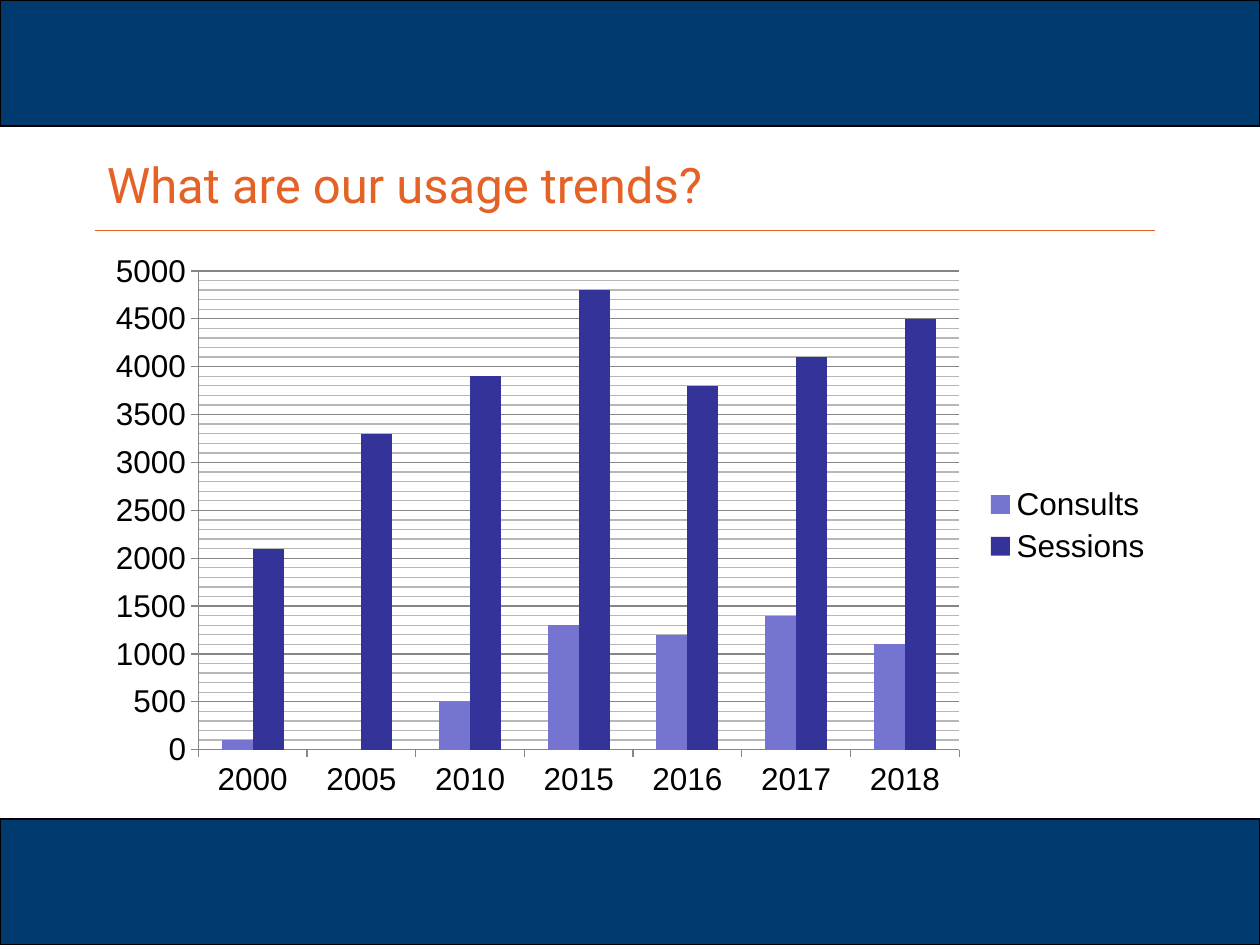
from copy import deepcopy

from lxml import etree
from pptx import Presentation
from pptx.chart.data import CategoryChartData
from pptx.dml.color import RGBColor
from pptx.enum.chart import XL_CHART_TYPE, XL_LEGEND_POSITION, XL_TICK_MARK
from pptx.enum.shapes import MSO_CONNECTOR, MSO_SHAPE
from pptx.enum.text import MSO_ANCHOR
from pptx.oxml.ns import qn
from pptx.util import Inches, Pt

COLUMNS = XL_CHART_TYPE.COLUMN_CLUSTERED
LEGEND_RIGHT = XL_LEGEND_POSITION.RIGHT
TICK_OUT, TICK_NONE = XL_TICK_MARK.OUTSIDE, XL_TICK_MARK.NONE
STRAIGHT, RECTANGLE = MSO_CONNECTOR.STRAIGHT, MSO_SHAPE.RECTANGLE
MIDDLE = MSO_ANCHOR.MIDDLE

# Content
TITLE = "What are our usage trends?"
YEARS = ["2000", "2005", "2010", "2015", "2016", "2017", "2018"]
SERIES = {
    "Consults": [100, None, 500, 1300, 1200, 1400, 1100],
    "Sessions": [2100, 3300, 3900, 4800, 3800, 4100, 4500],
}

THEME = {
    "band": "003A6E", "band_line": "000000", "accent": "E46225",
    "text": "000000", "axis": "868686", "minor_grid": "B7B7B7",
    "series": ["7575D1", "333399"],
    "title_font": "Roboto", "title_size": 28,
    "chart_font": "Arial", "chart_size": 18, "line": 0.75,
}

# Layout in inches
WIDTH, HEIGHT, BAND = 10, 7.5, 1
LEFT, CONTENT_WIDTH = 0.75, 8.5
TITLE_TOP, TITLE_HEIGHT = 1.17, 0.58
RULE_Y, RULE_RIGHT = 1.83, 9.17
CHART_TOP, CHART_HEIGHT = 1.92, 4.5


def color(name):
    return RGBColor.from_string(THEME[name])


def set_line(line, name):
    line.color.rgb = color(name)
    line.width = Pt(THEME["line"])


def set_font(font, kind, color_name):
    values = {"name": THEME[kind + "_font"], "size": Pt(THEME[kind + "_size"]),
              "bold": False}
    for key, value in values.items():
        setattr(font, key, value)
    font.color.rgb = color(color_name)


prs = Presentation()
prs.slide_width, prs.slide_height = Inches(WIDTH), Inches(HEIGHT)
s = prs.slides.add_slide(prs.slide_layouts[6])

# Top and bottom bands
for top in (0, HEIGHT - BAND):
    sp = s.shapes.add_shape(RECTANGLE, 0, Inches(top), Inches(WIDTH), Inches(BAND))
    sp.shadow.inherit = False
    sp.fill.solid()
    sp.fill.fore_color.rgb = color("band")
    set_line(sp.line, "band_line")

# Rule under the title
rule = s.shapes.add_connector(STRAIGHT, Inches(LEFT), Inches(RULE_Y),
                              Inches(RULE_RIGHT), Inches(RULE_Y))
set_line(rule.line, "accent")
etree.SubElement(rule._element.spPr, qn("a:effectLst"))

# Title
box = s.shapes.add_textbox(Inches(LEFT), Inches(TITLE_TOP),
                           Inches(CONTENT_WIDTH), Inches(TITLE_HEIGHT))
tf = box.text_frame
tf.word_wrap = True
tf.vertical_anchor = MIDDLE
r = tf.paragraphs[0].add_run()
r.text = TITLE
set_font(r.font, "title", "accent")

# Usage chart
data = CategoryChartData()
data.categories = YEARS
for name, values in SERIES.items():
    data.add_series(name, values)
chart = s.shapes.add_chart(COLUMNS, Inches(LEFT), Inches(CHART_TOP),
                           Inches(CONTENT_WIDTH), Inches(CHART_HEIGHT), data).chart
set_font(chart.font, "chart", "text")
chart.has_title = False
chart.has_legend = True
chart.legend.position = LEGEND_RIGHT
chart.legend.include_in_layout = False

plot = chart.plots[0]
plot.gap_width, plot.overlap = 150, 0
plot.vary_by_categories = False
for series, fill in zip(plot.series, THEME["series"]):
    series.format.fill.solid()
    series.format.fill.fore_color.rgb = RGBColor.from_string(fill)

# Axes and gridlines
for axis in (chart.category_axis, chart.value_axis):
    axis.major_tick_mark, axis.minor_tick_mark = TICK_OUT, TICK_NONE
    set_line(axis.format.line, "axis")
value_axis = chart.value_axis
scale = {"minimum_scale": 0, "maximum_scale": 5000, "major_unit": 500,
         "minor_unit": 100, "has_major_gridlines": True,
         "has_minor_gridlines": True}
for key, value in scale.items():
    setattr(value_axis, key, value)
set_line(value_axis.major_gridlines.format.line, "axis")

# Minor gridlines take the major line format in a lighter colour
major, minor = (value_axis._element.find(qn(tag))
                for tag in ("c:majorGridlines", "c:minorGridlines"))
minor.append(deepcopy(major.find(qn("c:spPr"))))
for clr in minor.iter(qn("a:srgbClr")):
    clr.set("val", THEME["minor_grid"])

prs.save("out.pptx")
